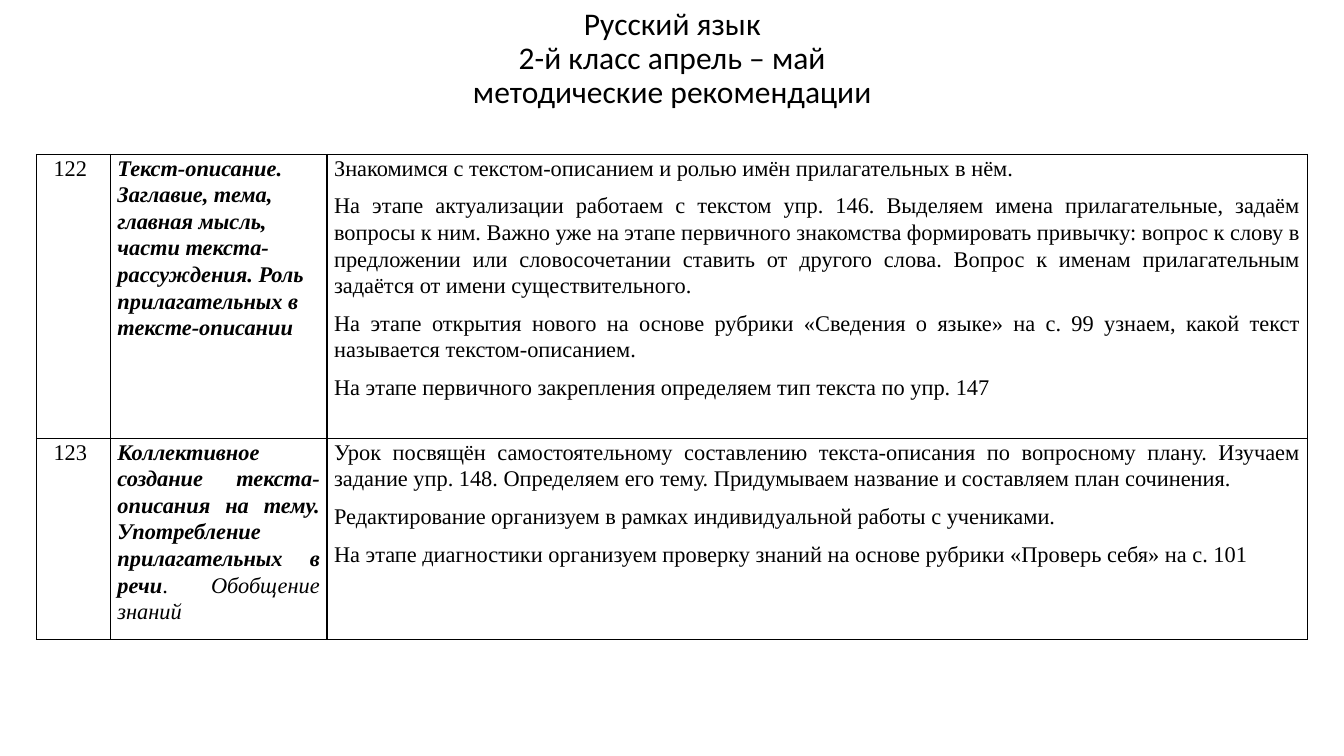
"""Build a slide with teaching notes for two Russian language lessons."""
import pptx
import pptx.dml.color
import pptx.enum.text
import pptx.oxml
import pptx.oxml.ns
import pptx.util
from pptx.util import Cm, Pt

ALIGN = pptx.enum.text.PP_ALIGN
ANCHOR = pptx.enum.text.MSO_ANCHOR
BLACK = "000000"
HEADING = ["Русский язык", "2-й класс апрель – май", "методические рекомендации"]
LESSONS = [
    {
        "number": "122",
        "topic": [("Текст-описание. Заглавие, тема, главная мысль, части текста-рассуждения. "
                   "Роль прилагательных в тексте-описании", True, True)],
        "topic_align": ALIGN.LEFT,
        "advice": [
            "Знакомимся с текстом-описанием и ролью имён прилагательных в нём.",
            "На этапе актуализации работаем с текстом упр. 146. Выделяем имена прилагательные, "
            "задаём вопросы к ним. Важно уже на этапе первичного знакомства формировать привычку: "
            "вопрос к слову в предложении или словосочетании ставить от другого слова. "
            "Вопрос к именам прилагательным задаётся от имени существительного.",
            "На этапе открытия нового на основе рубрики «Сведения о языке» на с. 99 узнаем, "
            "какой текст называется текстом-описанием.",
            "На этапе первичного закрепления определяем тип текста по упр. 147",
        ],
        "height": 7.16,
    },
    {
        "number": "123",
        "topic": [("Коллективное создание текста-описания на тему. "
                   "Употребление прилагательных в речи", True, True),
                  (".", False, False),
                  (" Обобщение знаний", False, True)],
        "topic_align": ALIGN.JUSTIFY,
        "advice": [
            "Урок посвящён самостоятельному составлению текста-описания по вопросному плану. "
            "Изучаем задание упр. 148. Определяем его тему. "
            "Придумываем название и составляем план сочинения.",
            "Редактирование организуем в рамках индивидуальной работы с учениками.",
            "На этапе диагностики организуем проверку знаний на основе рубрики "
            "«Проверь себя» на с. 101",
        ],
        "height": 4.7,
    },
]
COLUMN_WIDTHS = [1.86, 5.46, 24.71]
CELL_MARGIN = 0.18
NUMBER_INDENT = 0.25


def color(value):
    """Turn a hex string into a colour."""
    return pptx.dml.color.RGBColor.from_string(value)


def write(frame, paragraphs, font="Times New Roman", size=16, align=ALIGN.LEFT,
          spacing=1.07, after=8):
    """Fill a text frame with paragraphs, each a list of (text, bold, italic)."""
    for index, spans in enumerate(paragraphs):
        para = frame.paragraphs[0] if index == 0 else frame.add_paragraph()
        para.alignment = align
        para.line_spacing = spacing
        para.space_before = Pt(0)
        para.space_after = Pt(after)
        for text, bold, italic in spans:
            span = para.add_run()
            span.text = text
            span.font.name = font
            span.font.size = Pt(size)
            span.font.bold = bold
            span.font.italic = italic
            span.font.color.rgb = color(BLACK)


def plain(lines):
    """Make each line a paragraph of one unstyled span."""
    return [[(line, False, False)] for line in lines]


def frame_cell(cell, indent=0):
    """Set margins, thin borders and no fill on a cell."""
    cell.margin_left = Cm(CELL_MARGIN + indent)
    cell.margin_right = Cm(CELL_MARGIN)
    cell.margin_top = cell.margin_bottom = 0
    cell.vertical_anchor = ANCHOR.TOP
    properties = cell._tc.get_or_add_tcPr()
    for side in ("lnL", "lnR", "lnT", "lnB"):
        properties.append(pptx.oxml.parse_xml(
            f'<a:{side} {pptx.oxml.ns.nsdecls("a")} w="{Pt(1)}"><a:solidFill>'
            f'<a:srgbClr val="{BLACK}"/></a:solidFill></a:{side}>'))
    cell.fill.background()


def add_heading(page):
    """Place the centred heading."""
    box = page.shapes.add_textbox(Cm(2.34), Cm(0.2), Cm(29.21), Cm(2.59))
    box.text_frame.word_wrap = True
    box.text_frame.vertical_anchor = ANCHOR.MIDDLE
    write(box.text_frame, plain(HEADING), font="Calibri", size=22.5,
          align=ALIGN.CENTER, spacing=0.9, after=0)


def add_lessons(page):
    """Place the table with one row per lesson."""
    height = sum(lesson["height"] for lesson in LESSONS)
    table = page.shapes.add_table(len(LESSONS), len(COLUMN_WIDTHS), Cm(0.92), Cm(3.89),
                                  Cm(sum(COLUMN_WIDTHS)), Cm(height)).table
    table.first_row = table.horz_banding = False
    for column, width in zip(table.columns, COLUMN_WIDTHS):
        column.width = Cm(width)
    for row, lesson in zip(table.rows, LESSONS):
        row.height = Cm(lesson["height"])
        number, topic, advice = row.cells
        frame_cell(number, indent=NUMBER_INDENT)
        frame_cell(topic)
        frame_cell(advice)
        write(number.text_frame, plain([lesson["number"]]))
        write(topic.text_frame, [lesson["topic"]], align=lesson["topic_align"])
        write(advice.text_frame, plain(lesson["advice"]), align=ALIGN.JUSTIFY)


def main():
    """Build and save the deck."""
    deck = pptx.Presentation()
    deck.slide_width = Cm(33.87)
    deck.slide_height = Cm(19.05)
    page = deck.slides.add_slide(deck.slide_layouts[6])
    add_heading(page)
    add_lessons(page)
    deck.save("out.pptx")


if __name__ == "__main__":
    main()
